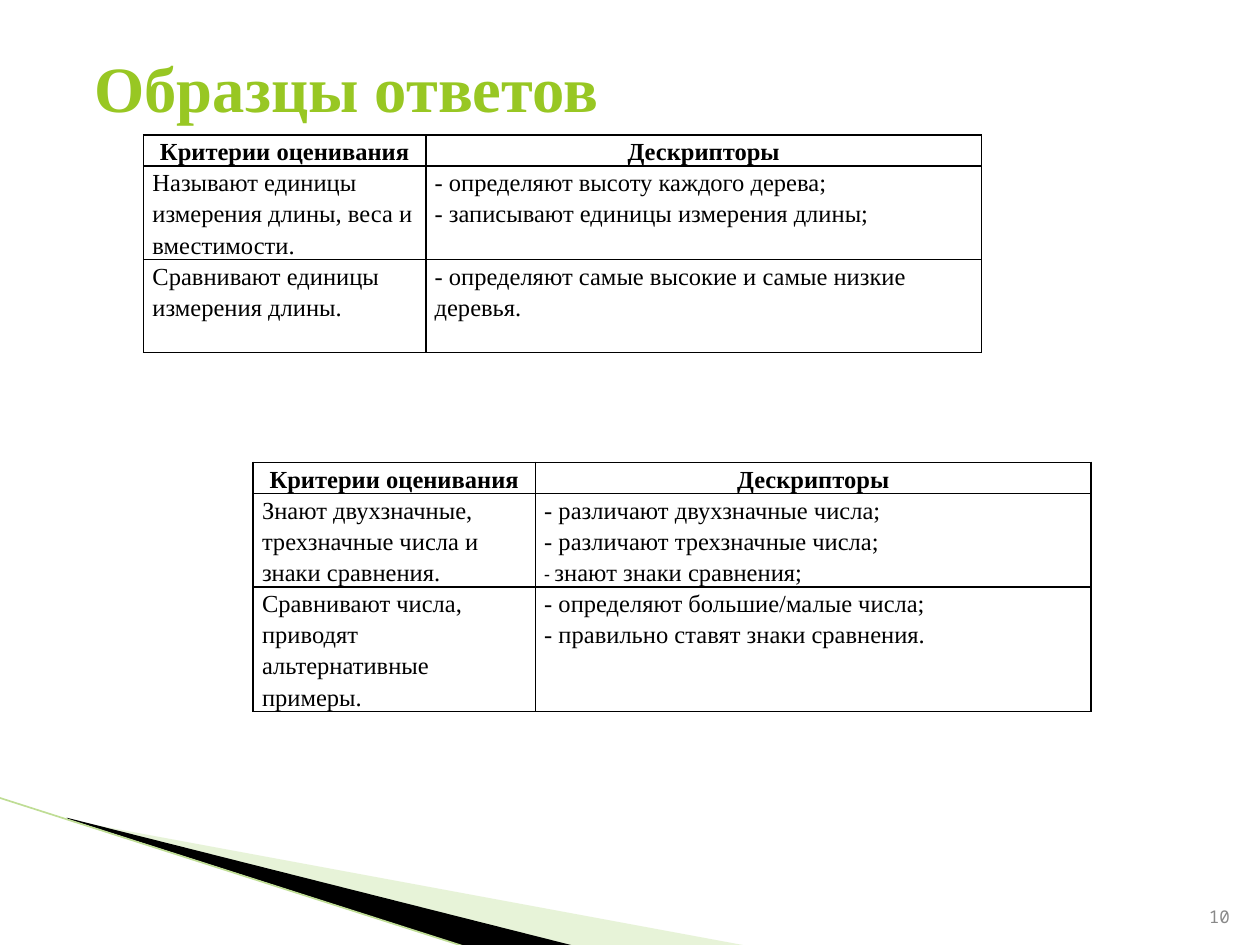
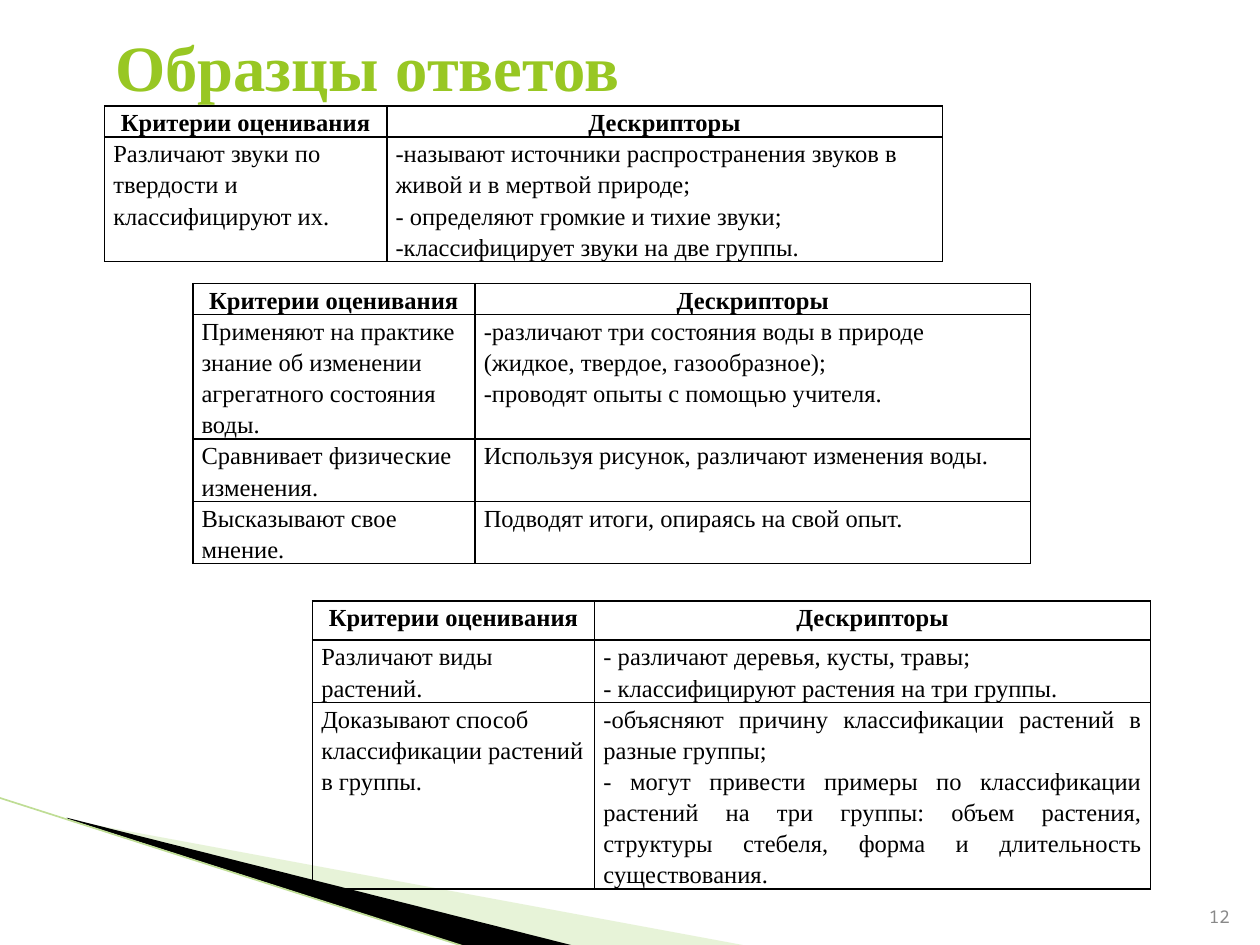
from lxml import etree
from pptx import Presentation
from pptx.dml.color import RGBColor
from pptx.enum.shapes import MSO_CONNECTOR
from pptx.enum.text import MSO_ANCHOR, MSO_AUTO_SIZE, PP_ALIGN
from pptx.oxml.ns import qn
from pptx.util import Inches, Pt

CENTER, RIGHT, LEFT, JUSTIFY = PP_ALIGN.CENTER, PP_ALIGN.RIGHT, PP_ALIGN.LEFT, PP_ALIGN.JUSTIFY
MIDDLE, BOTTOM, TOP = MSO_ANCHOR.MIDDLE, MSO_ANCHOR.BOTTOM, MSO_ANCHOR.TOP
STRAIGHT = MSO_CONNECTOR.STRAIGHT
TITLE_ONLY = 5

# Shared look
FONT, DASH_FONT, NUMBER_FONT = "Times New Roman", "Calibri", "Noto Sans Mono"
BLACK, GREEN, PALE_GREEN = "000000", "98C723", "C5E19F"
LINE_GREEN, GRAY = "BFDD95", "898989"
TITLE = "Образцы ответов"
HEADER = ("Критерии оценивания", "Дескрипторы")
COLUMN_WIDTHS = (2.24, 4.41)
TEXT_LINE = Pt(17.7)
HEADER_HEIGHT = 0.24
WEDGES = [
    # points, colour, opacity in percent
    ([(0.55, 6.51), (5.95, 7.51), (4.56, 7.51), (0.55, 6.5)], PALE_GREEN, 40),
    ([(0.53, 6.49), (4.57, 7.51), (3.72, 7.52), (0.54, 6.5)], BLACK, 100),
]
EDGE = (-0.01, 6.33, 3.71, 7.52)

# Content: each row is (text lines, criterion, descriptors);
# a descriptor given as a pair starts with a small dash
SLIDES = [
    {
        "number": "10",
        "title_box": (0.5, 0.3, 4.5, 0.77),
        "tables": [
            {"at": (1.14, 1.07), "rows": [
                (3, "Называют единицы измерения длины, веса и вместимости.",
                 ["- определяют высоту каждого дерева;",
                  "- записывают единицы измерения длины;"]),
                (3, "Сравнивают единицы измерения длины.",
                 ["- определяют самые высокие и самые низкие деревья."]),
            ]},
            {"at": (2.01, 3.67), "rows": [
                (3, "Знают двухзначные, трехзначные числа и знаки сравнения.",
                 ["- различают двухзначные числа;",
                  "- различают трехзначные числа;",
                  ("- ", "знают знаки сравнения;")]),
                (4, "Сравнивают числа, приводят альтернативные примеры.",
                 ["- определяют большие/малые числа;",
                  "- правильно ставят знаки сравнения."]),
            ]},
        ],
    },
    {
        "number": "12",
        "title_box": (0.51, 0.21, 4.81, 0.63),
        "tables": [
            {"at": (0.83, 0.84), "rows": [
                (4, "Различают звуки по твердости и классифицируют их.",
                 ["-называют источники распространения звуков в живой и в мертвой природе;",
                  "- определяют громкие и тихие звуки;",
                  "-классифицирует звуки на две группы."]),
            ]},
            {"at": (1.53, 2.25), "rows": [
                (4, "Применяют на практике знание об изменении агрегатного состояния воды.",
                 ["-различают три состояния воды в природе (жидкое, твердое, газообразное);",
                  "-проводят опыты с помощью учителя."]),
                (2, "Сравнивает физические изменения.",
                 ["Используя рисунок, различают изменения воды."]),
                (2, "Высказывают свое мнение.",
                 ["Подводят итоги, опираясь на свой опыт."]),
            ]},
            {"at": (2.48, 4.77), "header_height": 0.31, "justified_row": 2, "rows": [
                (2, "Различают виды растений.",
                 ["- различают деревья, кусты, травы;",
                  "- классифицируют растения на три группы."]),
                (6, "Доказывают способ классификации растений в группы.",
                 ["-объясняют причину классификации растений в разные группы;",
                  "- могут привести примеры по классификации растений на три группы: "
                  "объем растения, структуры стебеля, форма и длительность существования."]),
            ]},
        ],
    },
]


def rgb(color):
    return RGBColor.from_string(color)


def inches(values):
    return [Inches(value) for value in values]


def set_font(font, name, size, color, bold=False):
    font.name, font.size, font.bold = name, Pt(size), bold
    font.color.rgb = rgb(color)


def add_wedges(slide):
    for points, color, opacity in WEDGES:
        corners = [tuple(inches(point)) for point in points]
        builder = slide.shapes.build_freeform(*corners[0])
        builder.add_line_segments(corners[1:], close=True)
        wedge = builder.convert_to_shape()
        wedge.shadow.inherit = False
        wedge.fill.solid()
        wedge.fill.fore_color.rgb = rgb(color)
        wedge.line.fill.background()
        if opacity < 100:
            color_element = wedge.fill._xPr.find(qn("a:solidFill"))[0]
            etree.SubElement(color_element, qn("a:alpha"), val=str(opacity * 1000))
    edge = slide.shapes.add_connector(STRAIGHT, *inches(EDGE))
    edge.line.color.rgb = rgb(LINE_GREEN)
    edge.line.width = Pt(0.95)
    etree.SubElement(edge._element.spPr, qn("a:effectLst"))


def fill_frame(frame, text, anchor, alignment, *font):
    frame.word_wrap = True
    frame.auto_size = MSO_AUTO_SIZE.NONE
    frame.vertical_anchor = anchor
    paragraph = frame.paragraphs[0]
    paragraph.text = text
    paragraph.alignment = alignment
    set_font(paragraph.font, *font)


def add_title_and_number(slide, title_box, number):
    title = slide.shapes.title
    title.left, title.top, title.width, title.height = inches(title_box)
    fill_frame(title.text_frame, TITLE, MIDDLE, CENTER, FONT, 36.9, GREEN, True)
    number_box = slide.shapes.add_textbox(*inches((9.46, 7.01, 0.4, 0.4)))
    fill_frame(number_box.text_frame, number, BOTTOM, RIGHT, NUMBER_FONT, 10, GRAY)


def add_borders(cell):
    properties = cell._tc.get_or_add_tcPr()
    for side in ("lnL", "lnR", "lnT", "lnB"):
        border = etree.SubElement(properties, qn(f"a:{side}"), w=str(Pt(1)))
        fill = etree.SubElement(border, qn("a:solidFill"))
        etree.SubElement(fill, qn("a:srgbClr"), val=BLACK)


def fill_cell(cell, texts, alignment, bold):
    add_borders(cell)
    cell.fill.background()
    cell.margin_left = cell.margin_right = Inches(0.07)
    cell.margin_top = cell.margin_bottom = 0
    cell.vertical_anchor = TOP
    frame = cell.text_frame
    for index, text in enumerate(texts):
        paragraph = frame.add_paragraph() if index else frame.paragraphs[0]
        paragraph.alignment = alignment
        paragraph.line_spacing = 1.15
        set_font(paragraph.font, FONT, 14, BLACK, bold)
        if isinstance(text, tuple):
            dash, text = text
            run = paragraph.add_run()
            run.text = dash
            set_font(run.font, DASH_FONT, 11, BLACK)
        paragraph.add_run().text = text


def add_criteria_table(slide, content):
    rows = content["rows"]
    heights = [Inches(content.get("header_height", HEADER_HEIGHT))]
    heights += [TEXT_LINE * lines for lines, _, _ in rows]
    widths = inches(COLUMN_WIDTHS)
    table = slide.shapes.add_table(len(heights), len(widths), *inches(content["at"]),
                                   sum(widths), sum(heights)).table
    table.first_row = table.horz_banding = False
    for column, width in zip(table.columns, widths):
        column.width = width
    for row, height in zip(table.rows, heights):
        row.height = height

    for column, heading in enumerate(HEADER):
        fill_cell(table.cell(0, column), [heading], CENTER, True)
    for index, (_, criterion, descriptors) in enumerate(rows, 1):
        justified = index == content.get("justified_row")
        fill_cell(table.cell(index, 0), [criterion], LEFT, False)
        fill_cell(table.cell(index, 1), descriptors, JUSTIFY if justified else LEFT, False)


def main():
    presentation = Presentation()
    presentation.slide_width, presentation.slide_height = Inches(10), Inches(7.5)
    for content in SLIDES:
        slide = presentation.slides.add_slide(presentation.slide_layouts[TITLE_ONLY])
        add_wedges(slide)
        add_title_and_number(slide, content["title_box"], content["number"])
        for table_content in content["tables"]:
            add_criteria_table(slide, table_content)
    presentation.save("out.pptx")


if __name__ == "__main__":
    main()
